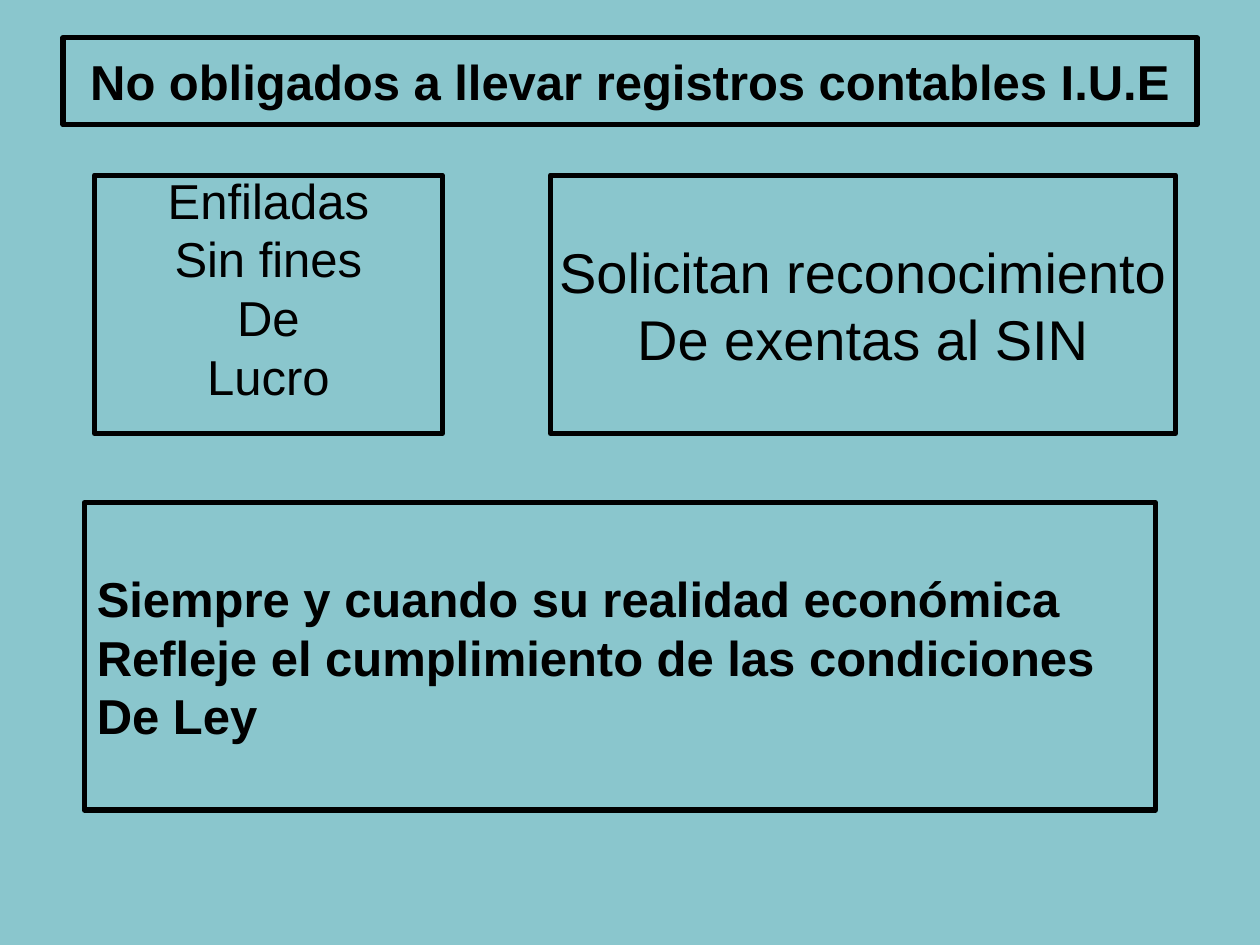
from lxml.etree import SubElement
from pptx import Presentation
from pptx.dml.color import RGBColor
from pptx.enum.shapes import MSO_SHAPE
from pptx.enum.text import MSO_ANCHOR, MSO_AUTO_SIZE, PP_ALIGN
from pptx.oxml import parse_xml
from pptx.oxml.ns import nsdecls, qn
from pptx.util import Inches, Pt


def color(value):
    return RGBColor.from_string(value)


def fill_box(box, lines, size, bold, align, anchor, wrap):
    box.fill.background()
    box.line.color.rgb = color("000000")
    box.line.width = Pt(3)
    frame = box.text_frame
    frame.auto_size = MSO_AUTO_SIZE.NONE
    frame.word_wrap = wrap
    frame.vertical_anchor = anchor
    for index, line in enumerate(lines):
        para = frame.paragraphs[0] if index == 0 else frame.add_paragraph()
        para.alignment = align
        span = para.add_run()
        span.text = line
        span.font.name = "Arial"
        span.font.size = Pt(size)
        span.font.bold = bold
        span.font.color.rgb = color("000000")


deck = Presentation()
deck.slide_width, deck.slide_height = Inches(10), Inches(7.5)
page = deck.slides.add_slide(deck.slide_layouts[1])
page.background.fill.solid()
page.background.fill.fore_color.rgb = color("8AC6CD")

# Title in a rounded frame
title = page.shapes.title
title.left, title.top = Inches(0.5), Inches(0.3)
title.width, title.height = Inches(9), Inches(0.69)
title.element.spPr.insert(1, parse_xml(
    f'<a:prstGeom {nsdecls("a")} prst="roundRect"><a:avLst/></a:prstGeom>'))
fill_box(title, ["No obligados a llevar registros contables I.U.E"],
         28, True, PP_ALIGN.CENTER, MSO_ANCHOR.MIDDLE, True)

# List of entities, without bullets
body = page.placeholders[1]
body.left, body.top = Inches(0.75), Inches(1.39)
body.width, body.height = Inches(2.76), Inches(2.05)
fill_box(body, ["Enfiladas", "Sin fines", "De", "Lucro"],
         28, False, PP_ALIGN.CENTER, MSO_ANCHOR.TOP, True)
for para in body.text_frame.paragraphs:
    para.line_spacing = 0.8
    para.space_before = Pt(6.7)
    properties = para._p.get_or_add_pPr()
    properties.set("marL", "0")
    properties.set("indent", "0")
    SubElement(properties, qn("a:buNone"))

# Request and condition boxes
boxes = [
    (4.37, 1.39, 4.96, 2.05, 32, False, PP_ALIGN.CENTER, False,
     ["Solicitan reconocimiento", "De exentas al SIN"]),
    (0.67, 3.99, 8.5, 2.44, 28, True, PP_ALIGN.LEFT, True,
     ["Siempre y cuando su realidad económica",
      "Refleje el cumplimiento de las condiciones", "De Ley"]),
]
for left, top, width, height, size, bold, align, wrap, lines in boxes:
    box = page.shapes.add_shape(MSO_SHAPE.RECTANGLE, Inches(left), Inches(top),
                                Inches(width), Inches(height))
    box.shadow.inherit = False
    fill_box(box, lines, size, bold, align, MSO_ANCHOR.MIDDLE, wrap)

deck.save("out.pptx")
